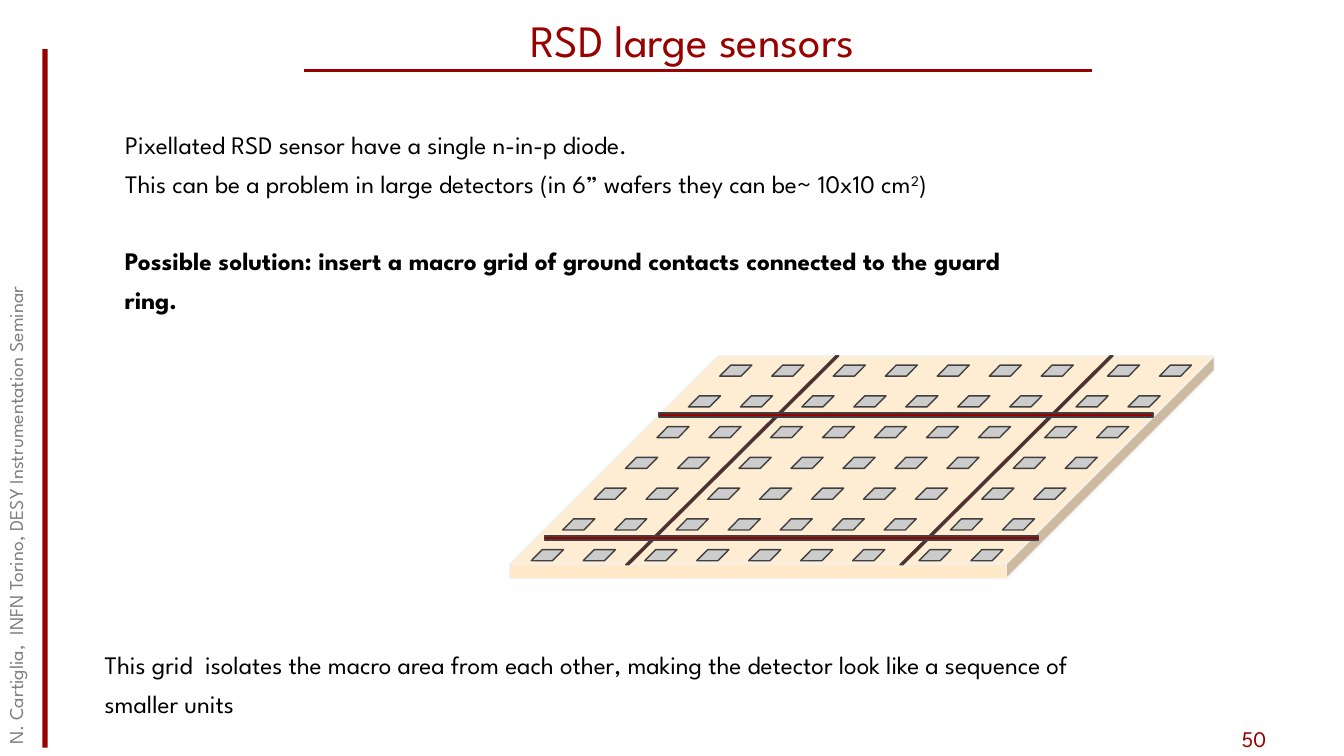
from lxml import etree
from pptx import Presentation
from pptx import util as u
from pptx.dml.color import RGBColor
from pptx.enum import shapes, text
from pptx.oxml.ns import qn

FONT = "League Spartan"
RED, BLACK, GREY = "990000", "000000", "808080"
OUTLINE = "404040"
KIND = shapes.MSO_SHAPE


def paint(color_format, color):
    """Set a colour from a hex string."""
    color_format.rgb = RGBColor.from_string(color)


def place(item, box):
    for name, length in zip(("left", "top", "width", "height"), box):
        setattr(item, name, u.Cm(length))


def add_block(parent, kind, box, fill, line=None, slant=None):
    """Add a filled preset shape, outlined by 1 pt if a line colour is given."""
    block = parent.shapes.add_shape(kind, *[u.Cm(length) for length in box])
    block.shadow.inherit = False
    block.fill.solid()
    paint(block.fill.fore_color, fill)
    if line:
        paint(block.line.color, line)
        block.line.width = u.Pt(1)
    else:
        block.line.fill.background()
    if slant is not None:
        block.adjustments[0] = slant
    return block


def write(item, paragraphs, size, color=BLACK, bold=False,
          anchor=text.MSO_ANCHOR.TOP, **paragraph_format):
    """Fill a frame; each paragraph is a list of (words, baseline) pairs."""
    frame = item.text_frame
    frame_format = {"word_wrap": True, "vertical_anchor": anchor,
                    "auto_size": text.MSO_AUTO_SIZE.NONE}
    for name, value in frame_format.items():
        setattr(frame, name, value)
    for index, spans in enumerate(paragraphs):
        para = frame.paragraphs[0] if index == 0 else frame.add_paragraph()
        if item.is_placeholder:
            properties = para._p.get_or_add_pPr()
            for name in ("marL", "indent"):
                properties.set(name, "0")
            etree.SubElement(properties, qn("a:buNone"))
        for name, value in {"space_before": u.Pt(0), **paragraph_format}.items():
            setattr(para, name, value)
        for words, baseline in spans:
            span = para.add_run()
            span.text = words
            for name, value in {"name": FONT, "size": u.Pt(size), "bold": bold}.items():
                setattr(span.font, name, value)
            paint(span.font.color, color)
            if baseline:
                span._r.get_or_add_rPr().set("baseline", str(baseline))


def add_label(page, box, words, size, **options):
    label = page.shapes.add_textbox(*[u.Cm(length) for length in box])
    write(label, [[(words, 0)]], size, **options)
    return label


def add_header(page, box):
    """Centred title with a rule beneath it."""
    left, top, width, height = box
    place(page.shapes.title, box)
    write(page.shapes.title, [[("RSD large sensors", 0)]], 32, color=RED,
          anchor=text.MSO_ANCHOR.BOTTOM, alignment=text.PP_ALIGN.CENTER)
    rule_y = u.Cm(top + height - 0.02)
    rule = page.shapes.add_connector(
        shapes.MSO_CONNECTOR.STRAIGHT, u.Cm(left + 6.61), rule_y,
        u.Cm(left + 26.47), rule_y)
    paint(rule.line.color, RED)
    rule.line.width = u.Pt(2)
    etree.SubElement(rule._element.spPr, qn("a:effectLst"))


def add_margin(page, box):
    """Red side bar, upright seminar label and page number."""
    left, top, width, height = box
    add_block(page, KIND.RECTANGLE, (left + 1.07, top + 1.24, 0.13, 17.6), RED)
    credit = add_label(page, (left - 8.86, top + 9.22, 18.62, 0.97),
                       "N. Cartiglia,  INFN Torino, DESY Instrumentation Seminar",
                       14, color=GREY)
    credit.rotation = 270
    add_label(page, (left + width - 2.83, top + height - 0.89, 2.06, 0.89), "50", 16,
              color=RED, anchor=text.MSO_ANCHOR.MIDDLE)


def add_statements(page, box):
    """Problem, possible solution and its effect."""
    left, top, width, height = box
    body = page.placeholders[1]
    place(body, (left + 0.51, top, 26.14, 4.14))
    write(body, [
        [("Pixellated RSD sensor have a single n-in-p diode.", 0)],
        [("This can be a problem in large detectors (in 6” wafers they can be~ 10x10 cm", 0),
         ("2", 30000), (")", 0)],
    ], 18, line_spacing=1.3)
    add_label(page, (left + 0.51, top + 2.92, 23.8, 3.15),
              "Possible solution: insert a macro grid of ground contacts "
              "connected to the guard ring.", 18, bold=True, line_spacing=1.3)
    add_label(page, (left, top + height - 2.16, width, 2.16),
              "This grid  isolates the macro area from each other, making the "
              "detector look like a sequence of smaller units", 18, line_spacing=1.3)


def add_sensor(page, box):
    """Slanted sensor slab with pads and a macro grid of ground contacts."""
    left, top, width, height = box
    sensor = page.shapes.add_group_shape()
    add_block(sensor, KIND.CUBE, box, "FFE9C8", "F2F2F2", 0.934)

    # Slanted ground contacts
    for bar_x in (2.92, 9.83):
        add_block(sensor, KIND.PARALLELOGRAM, (left + bar_x, top, 5.37, 5.26),
                  RED, OUTLINE, 1.006)

    # Pads: three areas of seven rows, each row shifted left
    pitch, row_step, row_shift = 1.31, 4.65 / 6, 4.75 / 6
    for area_x, columns in ((5.29, 2), (8.15, 5), (15.06, 2)):
        for row in range(7):
            for column in range(columns):
                pad_x = left + area_x + column * pitch - row * row_shift
                pad_y = top + 0.23 + row * row_step
                add_block(sensor, KIND.PARALLELOGRAM, (pad_x, pad_y, 0.81, 0.28),
                          "CCCCCC", OUTLINE, 0.984)

    # Level ground contacts
    for bar_x, bar_y in ((3.76, 1.44), (0.87, 4.54)):
        add_block(page, KIND.RECTANGLE, (left + bar_x, top + bar_y, 12.45, 0.1),
                  RED, OUTLINE)


def main():
    deck = Presentation()
    deck.slide_width, deck.slide_height = u.Cm(33.87), u.Cm(19.05)
    page = deck.slides.add_slide(deck.slide_layouts[1])
    add_margin(page, (0, 0, 33.87, 19.05))
    add_header(page, (1.04, -0.05, 32.82, 1.85))
    add_statements(page, (2.39, 2.9, 25.17, 15.26))
    add_sensor(page, (12.85, 8.97, 17.75, 5.61))
    deck.save("out.pptx")


if __name__ == "__main__":
    main()
